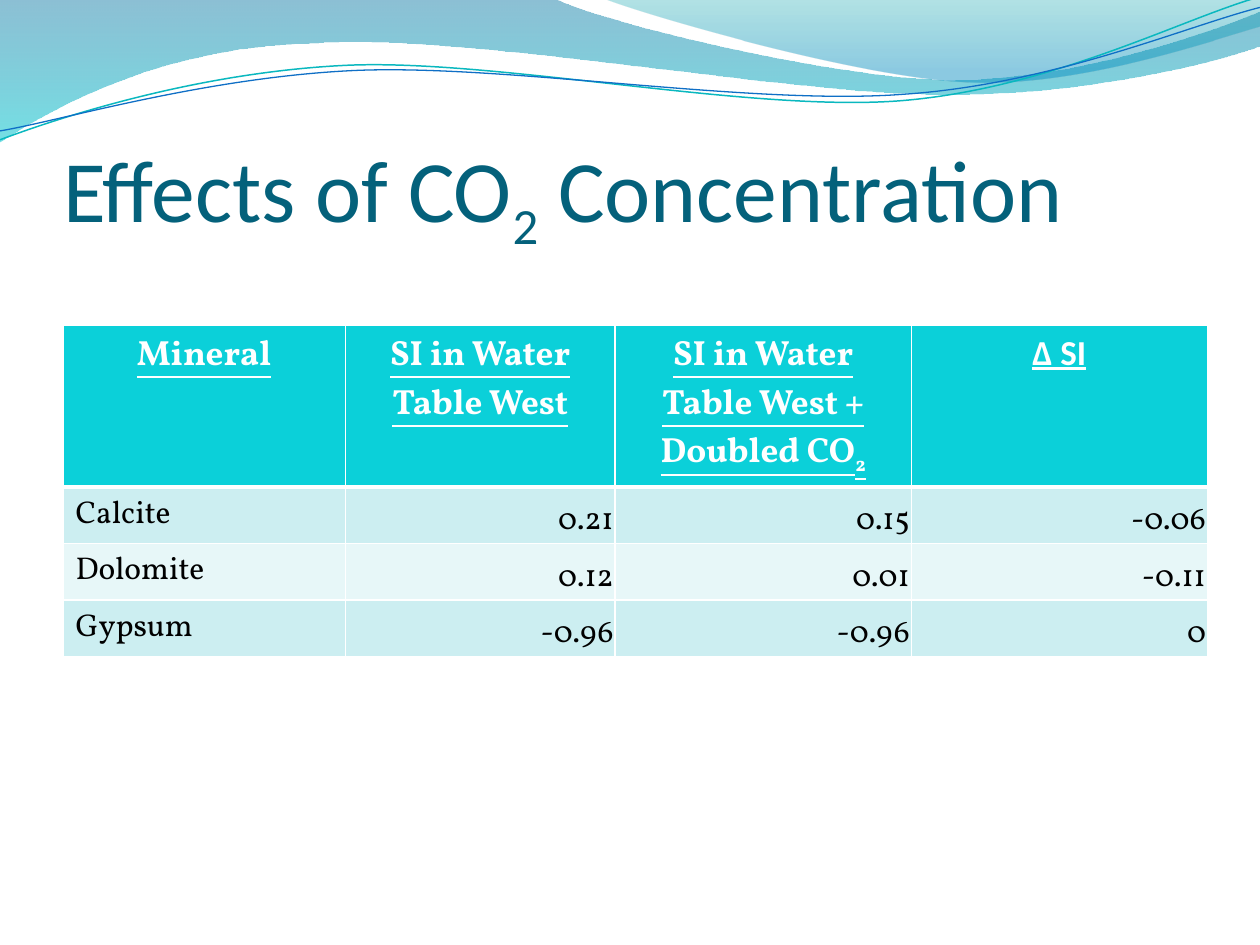
"""Build the slide on the effects of CO2 concentration: waves, title and table."""
from lxml.etree import SubElement
from pptx import Presentation
from pptx.dml.color import RGBColor
from pptx.enum.text import MSO_ANCHOR, MSO_AUTO_SIZE, PP_ALIGN
from pptx.oxml.ns import qn
from pptx.util import Cm, Pt

WHITE = RGBColor(0xFF, 0xFF, 0xFF)
BLACK = RGBColor(0x00, 0x00, 0x00)
TITLE_BLUE = RGBColor(0x04, 0x61, 0x7B)
HEADER_TEAL = RGBColor(0x0B, 0xD0, 0xD9)
BAND_DARK = RGBColor(0xCC, 0xEE, 0xF1)
BAND_LIGHT = RGBColor(0xE7, 0xF7, 0xF8)
LINE_TEAL = RGBColor(0x0A, 0xB8, 0xBF)
LINE_BLUE = RGBColor(0x0F, 0x6F, 0xC6)
DEEP_BLUE = RGBColor(0x00, 0x74, 0xA1)
BRIGHT_TEAL = RGBColor(0x00, 0xC6, 0xCF)
SEA_GREEN = RGBColor(0x00, 0xA1, 0xA9)
SKY_BLUE = RGBColor(0x00, 0x8B, 0xBF)


def add_wave(page, start, segments, closed):
    """Draw straight (x, y) and cubic (x1, y1, x2, y2, x, y) segments in cm."""
    points = [(Cm(segment[i]), Cm(segment[i + 1]))
              for segment in segments for i in range(0, len(segment), 2)]
    builder = page.shapes.build_freeform(Cm(start[0]), Cm(start[1]))
    builder.add_line_segments(points, close=closed)
    wave = builder.convert_to_shape()
    wave.shadow.inherit = False
    steps = wave._element.spPr.iter(qn("a:lnTo"))
    steps = iter(list(steps))
    for segment in segments:
        step = next(steps)
        if len(segment) == 6:
            step.tag = qn("a:cubicBezTo")
            for follower in (next(steps), next(steps)):
                step.append(follower[0])
                follower.getparent().remove(follower)
    return wave


def add_text(para, pieces, formats):
    """Add runs, lowering every second piece as a subscript."""
    for index, text in enumerate(pieces):
        span = para.add_run()
        span.text = text
        for name, value in formats.items():
            if name == "color":
                span.font.color.rgb = value
            else:
                setattr(span.font, name, value)
        if index % 2:
            span.font._element.set("baseline", "-25000")


deck = Presentation()
deck.slide_width, deck.slide_height = Cm(25.4), Cm(19.05)
page = deck.slides.add_slide(deck.slide_layouts[5])

bands = [
    ((0, 0), [(11.18, -0.03), (12.09, 0.43, 16.87, 1.6, 19.25, 1.6),
              (21.67, 1.6, 24.33, 0.66, 25.4, 0.23), (25.43, 0.91),
              (24.97, 1.12, 22.1, 1.93, 18.95, 1.9), (15.8, 1.9, 9.7, 0.71, 6.53, 0.86),
              (3.28, 0.91, 1.17, 2.11, -0.03, 2.87), (0, 0)],
     [(0, DEEP_BLUE, 45), (1, BRIGHT_TEAL, 55)]),
    ((12.17, -0.03), [(12.93, 0.28, 17.32, 1.57, 19.53, 1.65),
                      (21.74, 1.75, 24.41, 0.81, 25.4, 0.53), (25.4, 0), (12.17, -0.03)],
     [(0, SEA_GREEN, 30), (0.8, SKY_BLUE, 45)]),
]
for start, segments, stops in bands:
    band = add_wave(page, start, segments, True)
    band.line.fill.background()
    band.fill.gradient()
    band.fill.gradient_angle = 270
    for stop, (position, color, opacity) in zip(band.fill.gradient_stops, stops):
        stop.position = position
        stop.color.rgb = color
    for tint, (position, color, opacity) in zip(band._element.spPr.iter(qn("a:srgbClr")), stops):
        SubElement(tint, qn("a:alpha")).set("val", str(opacity * 1000))

strokes = [
    ((-0.05, 2.22), [(1.19, 1.82, 4.02, 1.04, 7.05, 1.05), (10.05, 1.07, 15.02, 2.37, 18.08, 2.29),
                     (21.13, 2.2, 23.86, 0.91, 25.4, 0.55)], LINE_TEAL, 0.85),
    ((-0.04, 2.04), [(1.16, 1.9, 4.17, 1.15, 7.2, 1.16), (10.25, 1.18, 15.13, 2.25, 18.19, 2.16),
                     (21.22, 2.1, 23.93, 1.06, 25.45, 0.75)], LINE_BLUE, 0.75),
]
for start, segments, color, width in strokes:
    stroke = add_wave(page, start, segments, False)
    stroke.rotation = 357.3
    stroke.fill.background()
    stroke.line.color.rgb = color
    stroke.line.width = Pt(width)

title = page.shapes.title
page.shapes._spTree.append(title._element)
title.left, title.top, title.width, title.height = Cm(1.27), Cm(1.96), Cm(22.86), Cm(3.18)
title_frame = {"margin_left": 0, "margin_right": 0, "margin_top": Cm(0.13), "margin_bottom": 0,
               "word_wrap": True, "auto_size": MSO_AUTO_SIZE.NONE, "vertical_anchor": MSO_ANCHOR.BOTTOM}
for name, value in title_frame.items():
    setattr(title.text_frame, name, value)
title_para = title.text_frame.paragraphs[0]
title_para.alignment = PP_ALIGN.LEFT
add_text(title_para, ["Effects of CO", "2", " Concentration"],
         {"name": "Calibri", "size": Pt(50), "color": TITLE_BLUE})

rows = [
    [["Mineral"], ["SI in Water Table West"], ["SI in Water Table West + Doubled CO", "2"], ["Δ SI"]],
    [["Calcite"], ["0.21"], ["0.15"], ["-0.06"]],
    [["Dolomite"], ["0.12"], ["0.01"], ["-0.11"]],
    [["Gypsum"], ["-0.96"], ["-0.96"], ["0"]],
]
row_fills = [HEADER_TEAL, BAND_DARK, BAND_LIGHT, BAND_DARK]
header_format = {"name": "Vollkorn", "size": Pt(20), "bold": True, "underline": True, "color": WHITE}
body_format = {"name": "Vollkorn", "size": Pt(18), "bold": False, "color": BLACK}
value_cell = {"margin_left": Cm(0.03), "margin_right": Cm(0.03), "margin_top": Cm(0.03),
              "margin_bottom": 0, "vertical_anchor": MSO_ANCHOR.BOTTOM}

table = page.shapes.add_table(4, 4, Cm(1.27), Cm(6.56), Cm(23.07), Cm(4.16)).table
for column, width in zip(table.columns, (5.69, 5.44, 5.97, 5.97)):
    column.width = Cm(width)
for row_index, (row, fill) in enumerate(zip(rows, row_fills)):
    table.rows[row_index].height = Cm(1.04)
    for column_index, pieces in enumerate(row):
        cell = table.cell(row_index, column_index)
        para = cell.text_frame.paragraphs[0]
        if row_index == 0:
            para.alignment = PP_ALIGN.CENTER
            font = "Calibri" if column_index == 3 else "Vollkorn"
            add_text(para, pieces, {**header_format, "name": font})
        else:
            add_text(para, pieces, body_format)
            if column_index:
                para.alignment = PP_ALIGN.RIGHT
                for name, value in value_cell.items():
                    setattr(cell, name, value)
        properties = cell._tc.get_or_add_tcPr()
        for side in ("lnL", "lnR", "lnT", "lnB"):
            thick = (row_index, side) in ((0, "lnB"), (1, "lnT"))
            border = SubElement(properties, qn(f"a:{side}"), w=str(Pt(3 if thick else 1)))
            paint = SubElement(border, qn("a:solidFill"))
            SubElement(paint, qn("a:srgbClr"), val=str(WHITE))
        cell.fill.solid()
        cell.fill.fore_color.rgb = fill

deck.save("out.pptx")
